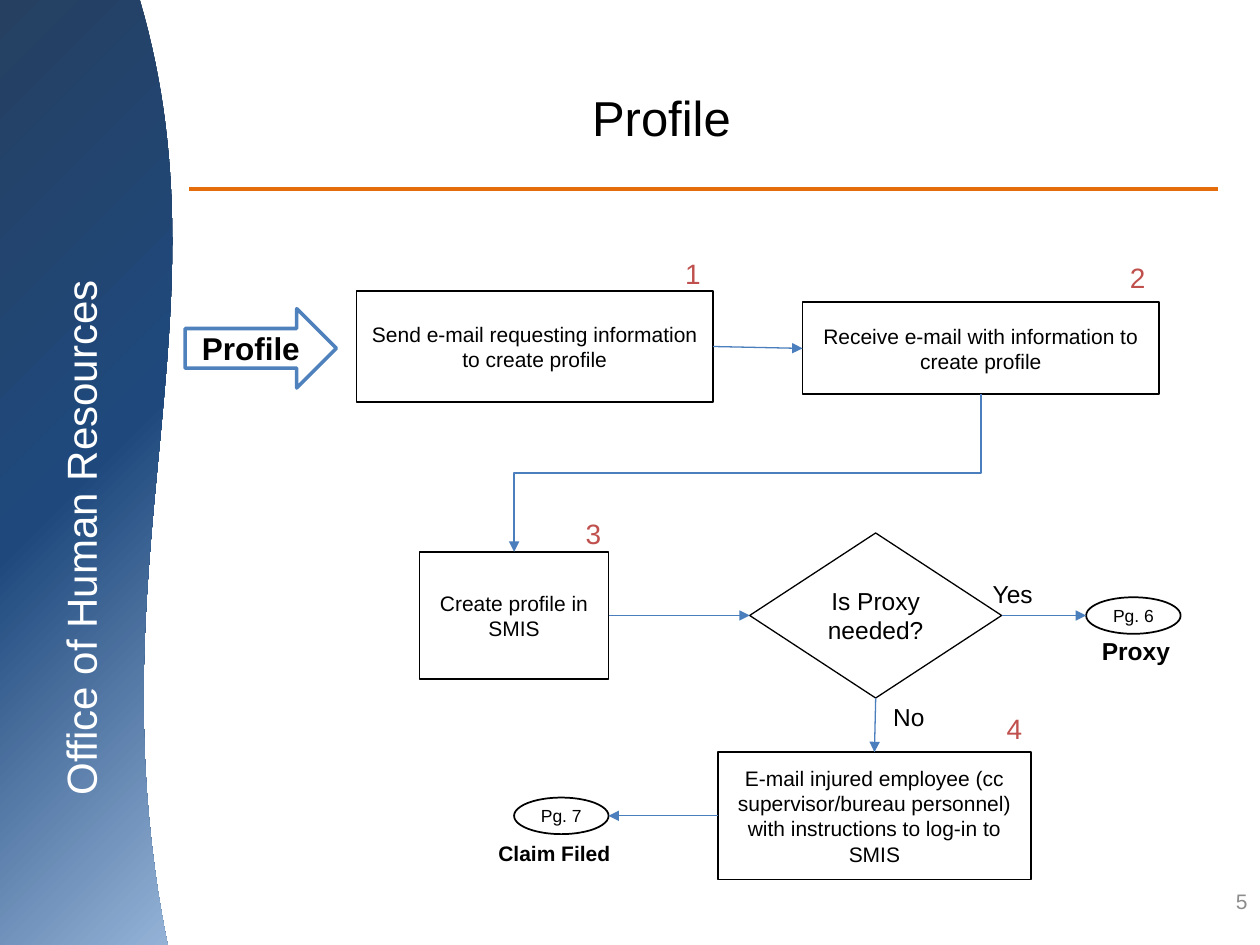
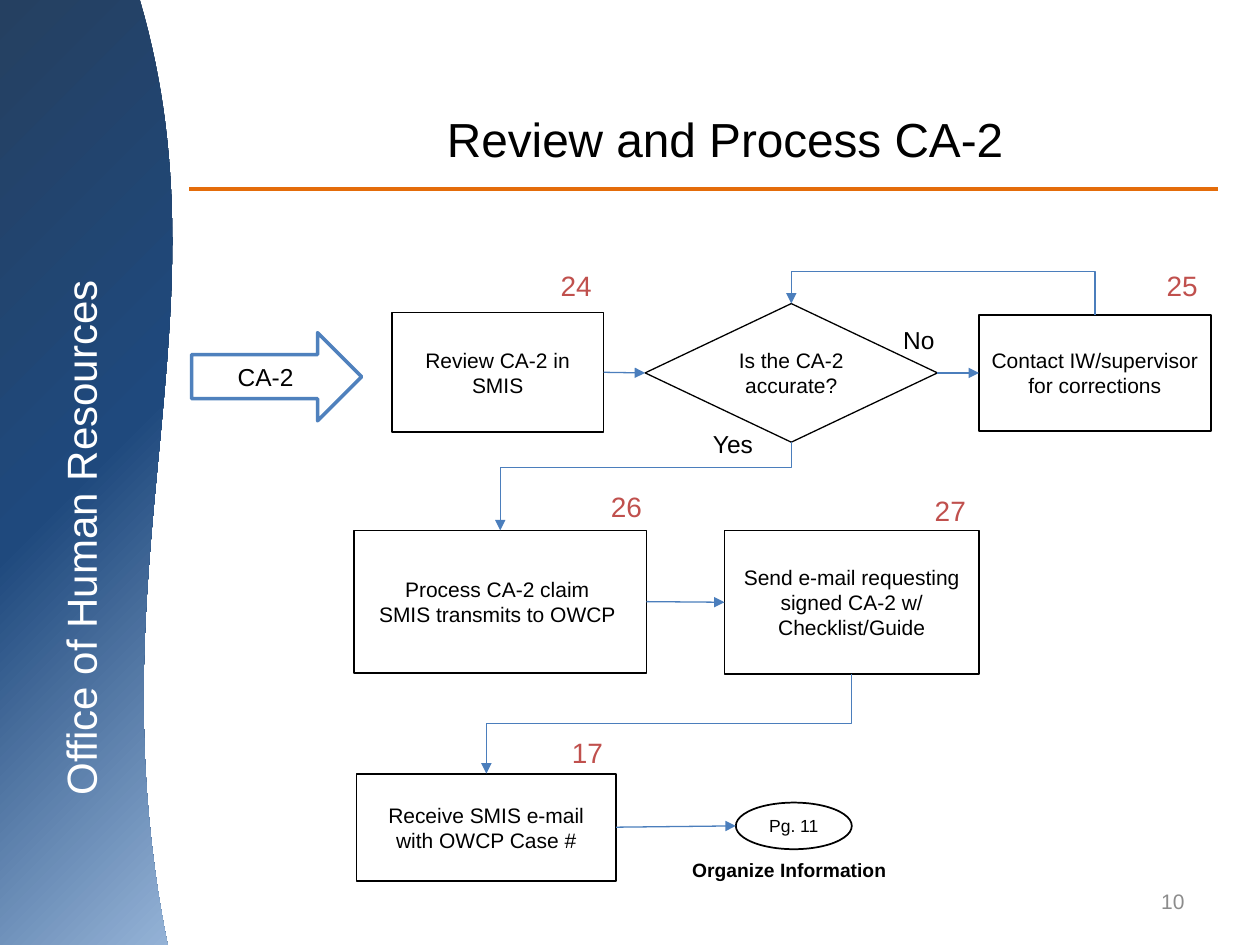
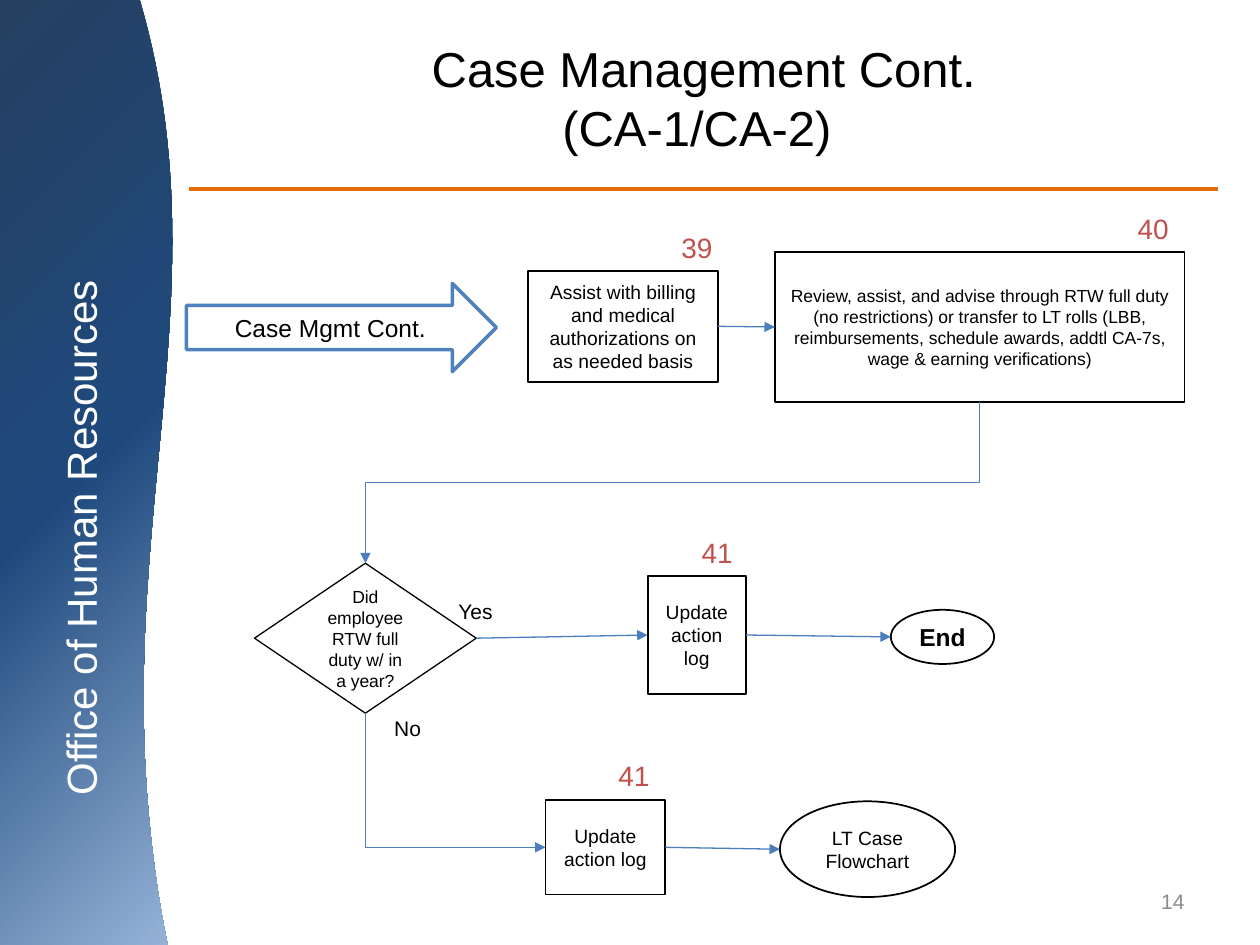
from dataclasses import dataclass

from lxml import etree
from pptx import Presentation
from pptx.dml.color import RGBColor
from pptx.enum.shapes import MSO_CONNECTOR, MSO_SHAPE
from pptx.enum.text import MSO_ANCHOR, MSO_AUTO_SIZE, PP_ALIGN
from pptx.oxml.ns import qn
from pptx.util import Inches, Pt

ARROW = MSO_SHAPE.RIGHT_ARROW
PROCESS = MSO_SHAPE.FLOWCHART_PROCESS
DECISION = MSO_SHAPE.FLOWCHART_DECISION
TERMINAL = MSO_SHAPE.FLOWCHART_CONNECTOR
STRAIGHT, ELBOW = MSO_CONNECTOR.STRAIGHT, MSO_CONNECTOR.ELBOW
LEFT, CENTER, RIGHT = PP_ALIGN.LEFT, PP_ALIGN.CENTER, PP_ALIGN.RIGHT
TOP, MIDDLE = MSO_ANCHOR.TOP, MSO_ANCHOR.MIDDLE
GROW = MSO_AUTO_SIZE.SHAPE_TO_FIT_TEXT

# Sides of a shape: connection site, then fractions of its width and height
SIDES = {"top": (0, 0.5, 0), "left": (1, 0, 0.5),
         "bottom": (2, 0.5, 1), "right": (3, 1, 0.5)}


@dataclass(frozen=True)
class Theme:
    font: str = "Arial"
    text: str = "000000"
    white: str = "FFFFFF"
    rule: str = "E46C0A"
    step: str = "C0504D"
    entry: str = "4F81BD"
    link: str = "4B7EBC"
    page: str = "8C8C8C"
    wave: tuple = ((0, "254061"), (0.5, "1F497D"), (1, "95B3D7"))
    title_size: float = 28
    band_size: float = 24
    step_size: float = 16
    large: float = 14
    body: float = 12
    small: float = 11
    tiny: float = 10


def cubic(p0, p1, p2, p3, steps=60):
    """Points along a Bézier curve, after its start."""
    points = []
    for i in range(1, steps + 1):
        t = i / steps
        u = 1 - t
        points.append(tuple(u**3 * a + 3 * u * u * t * b + 3 * u * t * t * c + t**3 * d
                            for a, b, c, d in zip(p0, p1, p2, p3)))
    return points


def side_point(sp, side):
    _, fx, fy = SIDES[side]
    return int(sp.left + sp.width * fx), int(sp.top + sp.height * fy)


class FlowDeck:
    def __init__(self, prs, theme):
        self.prs, self.theme = prs, theme
        self.s = None

    # Slide frame
    def new_slide(self, title, box, number, number_right=9.5, size=None):
        self.s = self.prs.slides.add_slide(self.prs.slide_layouts[6])
        t = self.theme
        self.wave()
        band = self.text("Office of Human Resources", -2.12, 3.99, 5.47, 0.56,
                         t.band_size, t.white, anchor=TOP)
        band.text_frame.margin_top = Inches(0.1)
        band.rotation = 270
        rule = self.s.shapes.add_connector(
            STRAIGHT, Inches(1.5), Inches(1.5), Inches(9.67), Inches(1.5))
        self.style_line(rule, t.rule, 2.25)
        self.text(title, *box, size or t.title_size)
        self.text(number, number_right - 2.33, 6.95, 2.33, 0.4, t.body, t.page, align=RIGHT)

    def wave(self):
        edge = cubic((1.11, 0), (1.84, 2.51), (0.72, 4.46), (1.33, 7.5))
        builder = self.s.shapes.build_freeform(Inches(1.11), 0, scale=1.0)
        builder.add_line_segments([(Inches(x), Inches(y)) for x, y in edge]
                                  + [(0, Inches(7.5)), (0, 0)])
        sp = builder.convert_to_shape()
        sp.shadow.inherit = False
        sp.line.fill.background()
        sp.fill.gradient()
        sp.fill.gradient_angle = 315
        stop_list = sp._element.spPr.find(qn("a:gradFill")).find(qn("a:gsLst"))
        extra = etree.SubElement(stop_list, qn("a:gs"), pos="100000")
        etree.SubElement(extra, qn("a:srgbClr"), val=self.theme.white)
        for stop, (position, color) in zip(sp.fill.gradient_stops, self.theme.wave):
            stop.position = position
            stop.color.rgb = RGBColor.from_string(color)

    # Text
    def set_text(self, tf, text, size, color, bold=False, align=CENTER, anchor=MIDDLE):
        tf.text = text
        tf.vertical_anchor = anchor
        for p in tf.paragraphs:
            p.alignment = align
            p.font.name = self.theme.font
            p.font.size = Pt(size)
            p.font.bold = bold
            p.font.color.rgb = RGBColor.from_string(color)

    def text(self, text, x, y, w, h, size, color=None, bold=False,
             align=CENTER, anchor=MIDDLE, wrap=True):
        sp = self.s.shapes.add_textbox(Inches(x), Inches(y), Inches(w), Inches(h))
        tf = sp.text_frame
        tf.word_wrap = wrap
        if not wrap:
            tf.auto_size = GROW
        self.set_text(tf, text, size, color or self.theme.text, bold, align, anchor)
        return sp

    def label(self, text, x, y, w, h=0.34, size=None, color=None, bold=False, align=LEFT):
        self.text(text, x, y, w, h, size or self.theme.large, color, bold,
                  align, TOP, wrap=False)

    def step(self, number, x, y):
        self.label(number, x, y, 0.33 if len(number) == 1 else 0.45, 0.37,
                   self.theme.step_size, self.theme.step)

    # Flowchart shapes
    def node(self, kind, text, x, y, w, h, size, bold=False, line=None, weight=1.0):
        t = self.theme
        sp = self.s.shapes.add_shape(kind, Inches(x), Inches(y), Inches(w), Inches(h))
        sp.shadow.inherit = False
        sp.fill.background()
        sp.line.color.rgb = RGBColor.from_string(line or t.text)
        sp.line.width = Pt(weight)
        sp.text_frame.word_wrap = True
        self.set_text(sp.text_frame, text, size, t.text, bold)
        return sp

    def entry(self, text, x, y, w, h, size=None, bold=False):
        sp = self.node(ARROW, text, x, y, w, h, size or self.theme.large, bold,
                       self.theme.entry, 2)
        sp.fill.solid()
        sp.fill.fore_color.rgb = RGBColor.from_string(self.theme.white)

    def process(self, text, x, y, w, h, size=None):
        return self.node(PROCESS, text, x, y, w, h, size or self.theme.body)

    def decision(self, text, x, y, w, h, size=None):
        return self.node(DECISION, text, x, y, w, h, size or self.theme.body, weight=0.75)

    def terminal(self, text, x, y, w, h, size=None, bold=False):
        return self.node(TERMINAL, text, x, y, w, h, size or self.theme.tiny, bold)

    # Connectors
    def style_line(self, line, color, weight, arrow=False):
        line.line.color.rgb = RGBColor.from_string(color)
        line.line.width = Pt(weight)
        props = line._element.spPr
        if arrow:
            etree.SubElement(props.find(qn("a:ln")), qn("a:tailEnd"), type="triangle")
        etree.SubElement(props, qn("a:effectLst"))

    def glue(self, line, *ends):
        props = line._element.nvCxnSpPr.cNvCxnSpPr
        for tag, (sp, side) in zip(("a:stCxn", "a:endCxn"), ends):
            site = SIDES[side][0]
            if sp.auto_shape_type == TERMINAL:
                site *= 2  # an ellipse has eight sites
            etree.SubElement(props, qn(tag), id=str(sp.shape_id), idx=str(site))

    def link(self, a, b, start="right", end="left"):
        line = self.s.shapes.add_connector(STRAIGHT, *side_point(a, start),
                                           *side_point(b, end))
        self.glue(line, (a, start), (b, end))
        self.style_line(line, self.theme.link, 0.75, arrow=True)

    def elbow(self, a, b, start="bottom", end="top", bend=0.5):
        """Leave a vertically; bend is the share of the drop before the turn."""
        (x1, y1), (x2, y2) = side_point(a, start), side_point(b, end)
        w, h = abs(y2 - y1), abs(x2 - x1)
        left, top = (x1 + x2 - w) // 2, (y1 + y2 - h) // 2
        line = self.s.shapes.add_connector(ELBOW, left, top, left + w, top + h)
        xfrm = line._element.spPr.find(qn("a:xfrm"))
        geom = line._element.spPr.find(qn("a:prstGeom"))
        xfrm.set("rot", str((90 if start == "bottom" and end == "top" else 270) * 60000))
        if end == "left":
            xfrm.set("flipH", "1")
            geom.set("prst", "bentConnector2")
        else:
            if start == "top":
                xfrm.set("flipV", "1")
            etree.SubElement(geom.find(qn("a:avLst")), qn("a:gd"), name="adj1",
                             fmla=f"val {round(bend * 100000)}")
        self.glue(line, (a, start), (b, end))
        self.style_line(line, self.theme.link, 0.75, arrow=True)


def profile_slide(d):
    t = d.theme
    d.new_slide("Profile", (1.5, 0.3, 7.5, 1.25), "5", number_right=10)
    d.entry("Profile", 1.47, 2.45, 1.2, 0.63, 18, bold=True)
    request = d.process("Send e-mail requesting information to create profile",
                        2.83, 2.31, 2.83, 0.88)
    receive = d.process("Receive e-mail with information to create profile",
                        6.37, 2.4, 2.83, 0.73)
    create = d.process("Create profile in SMIS", 3.33, 4.38, 1.5, 1.01)
    notify = d.process("E-mail injured employee (cc supervisor/bureau personnel) "
                       "with instructions to log-in to SMIS", 5.7, 5.97, 2.48, 1.01)
    proxy = d.decision("Is Proxy needed?", 5.95, 4.23, 2, 1.31, t.large)
    proxy_page = d.terminal("Pg. 6", 8.62, 4.74, 0.75, 0.29)
    claim_page = d.terminal("Pg. 7", 4.08, 6.33, 0.75, 0.29)

    d.link(request, receive)
    d.elbow(receive, create)
    d.link(create, proxy)
    d.link(proxy, proxy_page)
    d.link(proxy, notify, "bottom", "top")
    d.link(notify, claim_page, "left", "right")

    for number, x, y in (("1", 5.34, 1.99), ("2", 8.87, 2.02),
                         ("3", 4.55, 4.05), ("4", 7.89, 5.6)):
        d.step(number, x, y)
    d.label("Yes", 7.78, 4.55, 0.52)
    d.label("No", 6.99, 5.52, 0.45)
    d.label("Proxy", 8.64, 5, 0.75, bold=True, align=CENTER)
    d.label("Claim Filed", 3.67, 6.62, 1.46, 0.3, t.body, bold=True, align=CENTER)


def review_slide(d):
    t = d.theme
    d.new_slide("Review and Process CA-2", (1.67, 0.47, 8.17, 1.25), "10", size=27.3)
    d.entry("CA-2", 1.52, 2.64, 1.35, 0.7)
    review = d.process("Review CA-2 in SMIS", 3.11, 2.48, 1.68, 0.95)
    accurate = d.decision("Is the CA-2 accurate?", 5.12, 2.41, 2.32, 1.1)
    contact = d.process("Contact IW/supervisor for corrections", 7.77, 2.5, 1.84, 0.92)
    claim = d.process("Process CA-2 claim \nSMIS transmits to OWCP ", 2.81, 4.21, 2.32, 1.13)
    send = d.process("Send e-mail requesting signed CA-2 w/ Checklist/Guide",
                     5.75, 4.21, 2.02, 1.14)
    receive = d.process("Receive SMIS e-mail with OWCP Case #", 2.83, 6.14, 2.06, 0.85)
    organize_page = d.terminal("Pg. 11", 5.84, 6.37, 0.92, 0.37)

    d.link(review, accurate)
    d.link(accurate, contact)
    d.elbow(contact, accurate, "top", "top", bend=3.8)
    d.elbow(accurate, claim, bend=0.285)
    d.link(claim, send)
    d.elbow(send, receive)
    d.link(receive, organize_page)

    for number, x, y in (("24", 4.35, 2.08), ("25", 9.16, 2.08), ("26", 4.75, 3.84),
                         ("27", 7.32, 3.87), ("17", 4.44, 5.79)):
        d.step(number, x, y)
    d.label("No", 7.07, 2.53, 0.45)
    d.label("Yes", 5.56, 3.36, 0.52)
    d.label("Organize Information", 5.31, 6.76, 1.91, 0.29, t.small, bold=True, align=CENTER)


def case_slide(d):
    t = d.theme
    d.new_slide("Case Management Cont.\n(CA-1/CA-2) ", (1.5, 0.3, 8.17, 0.95), "14")
    d.entry("Case Mgmt Cont.", 1.48, 2.25, 2.46, 0.7)
    assist = d.process("Assist with billing and medical authorizations on as needed basis",
                       4.19, 2.15, 1.51, 0.88, t.small)
    advise = d.process("Review, assist, and advise through RTW full duty (no restrictions) "
                       "or transfer to LT rolls (LBB, reimbursements, schedule awards, "
                       "addtl CA-7s, wage & earning verifications)",
                       6.15, 2, 3.25, 1.19, t.tiny)
    returned = d.decision("Did employee RTW full duty w/ in a year?",
                          2.02, 4.47, 1.76, 1.19, t.tiny)
    log_yes = d.process("Update action log", 5.14, 4.57, 0.78, 0.94, t.small)
    log_no = d.process("Update action log", 4.33, 6.35, 0.95, 0.75, t.small)
    end = d.terminal("End", 7.07, 4.84, 0.82, 0.43, t.large, bold=True)
    long_term = d.terminal("LT Case Flowchart", 6.19, 6.36, 1.39, 0.76, t.small)

    d.link(assist, advise)
    d.elbow(advise, returned)
    d.link(returned, log_yes)
    d.link(log_yes, end)
    d.elbow(returned, log_no, "bottom", "left")
    d.link(log_no, long_term)

    for number, x, y in (("39", 5.31, 1.78), ("40", 8.93, 1.63),
                         ("41", 5.47, 4.2), ("41", 4.81, 5.97)):
        d.step(number, x, y)
    d.label("Yes", 3.54, 4.7, 0.47, 0.3, t.body)
    d.label("No", 3.03, 5.63, 0.42, 0.3, t.body)


def main():
    prs = Presentation()
    prs.slide_width, prs.slide_height = Inches(10), Inches(7.5)
    deck = FlowDeck(prs, Theme())
    profile_slide(deck)
    review_slide(deck)
    case_slide(deck)
    prs.save("out.pptx")


if __name__ == "__main__":
    main()
